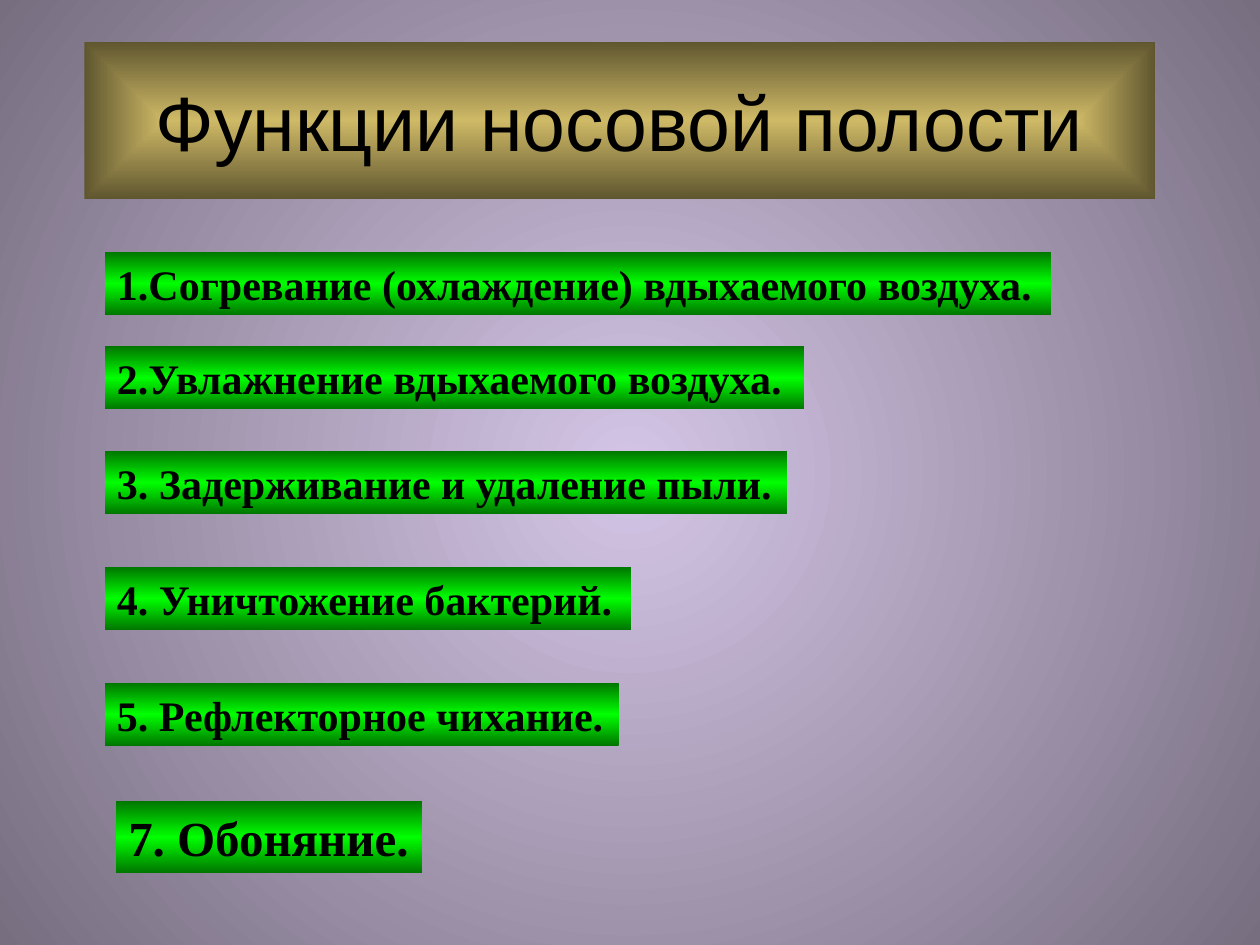
from pptx import Presentation
from pptx.dml.color import RGBColor
from pptx.enum.text import MSO_ANCHOR, MSO_AUTO_SIZE, PP_ALIGN
from pptx.oxml import parse_xml
from pptx.oxml.ns import nsdecls, qn
from pptx.util import Inches, Pt

BLACK = RGBColor(0x00, 0x00, 0x00)
LILAC = RGBColor(0xD4, 0xC5, 0xE6)
DUSK = RGBColor(0x77, 0x6E, 0x80)
GOLD = RGBColor(0xCE, 0xB9, 0x66)
BRONZE = RGBColor(0x5F, 0x56, 0x2F)
GREEN = RGBColor(0x00, 0xFF, 0x00)
DARK_GREEN = RGBColor(0x00, 0x76, 0x00)

VERTICAL = '<a:lin ang="5400000" scaled="1"/>'
FROM_CENTRE = ('<a:path path="{}"><a:fillToRect l="50000" t="50000" '
               'r="50000" b="50000"/></a:path>')

FUNCTIONS = [
    ("1.Согревание (охлаждение) вдыхаемого воздуха.", 0.83, 2, 7.51, 0.5, 24),
    ("2.Увлажнение вдыхаемого воздуха.", 0.83, 2.75, 5.55, 0.5, 24),
    ("3. Задерживание и удаление пыли.", 0.83, 3.58, 5.42, 0.5, 24),
    ("4. Уничтожение бактерий.", 0.83, 4.5, 4.18, 0.5, 24),
    ("5. Рефлекторное чихание.", 0.83, 5.42, 4.08, 0.5, 24),
    ("7. Обоняние.", 0.92, 6.36, 2.43, 0.57, 28),
]


def apply_gradient(fill, properties, colours, direction):
    """Fill an element with evenly spaced colours along a direction."""
    fill.background()
    step = 100000 // (len(colours) - 1)
    stops = "".join(
        f'<a:gs pos="{index * step}"><a:srgbClr val="{colour}"/></a:gs>'
        for index, colour in enumerate(colours))
    gradient = parse_xml(
        f'<a:gradFill {nsdecls("a")} rotWithShape="1">'
        f'<a:gsLst>{stops}</a:gsLst>{direction}</a:gradFill>')
    properties.replace(properties.find(qn("a:noFill")), gradient)


def write_text(frame, text, *, font, size, bold=False, align=PP_ALIGN.LEFT,
               anchor=MSO_ANCHOR.TOP, wrap=True, fit=MSO_AUTO_SIZE.NONE):
    """Put one formatted line of text in a frame."""
    frame.word_wrap = wrap
    frame.auto_size = fit
    frame.vertical_anchor = anchor
    paragraph = frame.paragraphs[0]
    paragraph.alignment = align
    run = paragraph.add_run()
    run.text = text
    run.font.name = font
    run.font.size = Pt(size)
    run.font.bold = bold
    run.font.color.rgb = BLACK


def paint_background(slide):
    """Give the slide its round lilac gradient."""
    fill = slide.background.fill
    fill.background()
    properties = slide.element.find(".//" + qn("p:bgPr"))
    apply_gradient(fill, properties, [LILAC, DUSK], FROM_CENTRE.format("circle"))


def place_title(slide, text, left, top, width, height):
    """Place the heading on its golden plate."""
    title = slide.shapes.title
    title.left, title.top = Inches(left), Inches(top)
    title.width, title.height = Inches(width), Inches(height)
    apply_gradient(title.fill, title.element.spPr, [GOLD, BRONZE],
                   FROM_CENTRE.format("rect"))
    write_text(title.text_frame, text, font="Arial", size=44,
               align=PP_ALIGN.CENTER, anchor=MSO_ANCHOR.MIDDLE)


def place_function(slide, text, left, top, width, height, size):
    """Place one function of the nasal cavity on a green strip."""
    strip = slide.shapes.add_textbox(
        Inches(left), Inches(top), Inches(width), Inches(height))
    apply_gradient(strip.fill, strip.element.spPr,
                   [DARK_GREEN, GREEN, DARK_GREEN], VERTICAL)
    write_text(strip.text_frame, text, font="Times New Roman", size=size,
               bold=True, wrap=False, fit=MSO_AUTO_SIZE.SHAPE_TO_FIT_TEXT)


def main():
    """Build and save the slide."""
    deck = Presentation()
    deck.slide_width, deck.slide_height = Inches(10), Inches(7.5)
    slide = deck.slides.add_slide(deck.slide_layouts[5])
    paint_background(slide)
    place_title(slide, "Функции носовой полости", 0.67, 0.33, 8.5, 1.25)
    for function in FUNCTIONS:
        place_function(slide, *function)
    deck.save("out.pptx")


if __name__ == "__main__":
    main()
